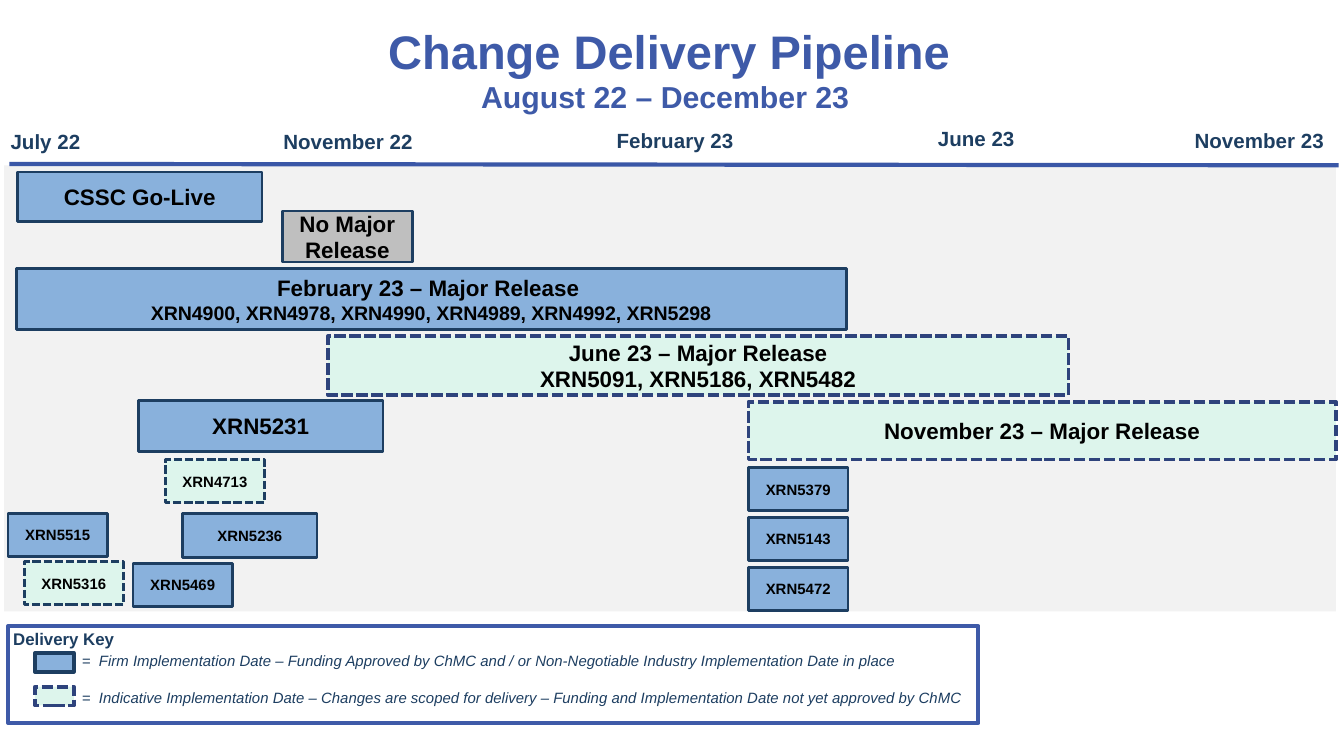
from pptx import Presentation
from pptx.dml.color import RGBColor
from pptx.enum.dml import MSO_LINE as Dash
from pptx.enum.shapes import MSO_CONNECTOR as Connector, MSO_SHAPE as Shape
from pptx.enum.text import MSO_ANCHOR as Anchor, PP_ALIGN as Align
from pptx.util import Emu, Pt
from lxml.etree import SubElement
from pptx.oxml.ns import qn

SCALE = 9144  # EMU per px, 100 px to the inch
NAVY, BLUE, AXIS, BLACK = "1D3E61", "3E5AA8", "3A57A7", "000000"

# Box styles: fill, line colour, line width, dashed
STYLES = {
    "firm": ("89B1DC", NAVY, 1.5, False),
    "firm key": ("89B1DC", NAVY, 2, False),
    "indicative": ("DDF5EC", "2E437C", 2, True),
    "small indicative": ("DDF5EC", NAVY, 1.5, True),
    "none": ("BFBFBF", NAVY, 1.5, False),
    "panel": ("F2F2F2", None, 0, False),
    "key frame": (None, BLUE, 2.25, False),
}

TITLE = [("Change Delivery Pipeline", 25.2), ("August 22 – December 23 ", 16.2)]

# Text, left, top, width
MONTHS = [
    ("July 22", -2, 91, 72),
    ("November 22", 201, 91, 117),
    ("February 23", 449, 90, 108),
    ("June 23", 688, 89, 78),
    ("November 23", 879, 90, 117),
]

# Style, (left, top, width, height), lines of (text, size)
RELEASES = [
    ("firm", (13, 128, 182, 37), [("CSSC Go-Live", 12)]),
    ("none", (210, 157, 97, 38), [("No Major Release", 12)]),
    ("firm", (12, 200, 618, 45), [
        ("February 23 – Major Release ", 12),
        ("XRN4900, XRN4978, XRN4990, XRN4989, XRN4992, XRN5298", 10.5)]),
    ("indicative", (244, 250, 551, 44), [
        ("June 23 – Major Release", 12), ("XRN5091, XRN5186, XRN5482", 12)]),
    ("firm", (103, 298, 182, 38), [("XRN5231", 12)]),
    ("indicative", (557, 299, 437, 43), [("November 23 – Major Release", 12)]),
    ("firm", (136, 382, 100, 33), [("XRN5236", 8)]),
]

# Small changes of one size: text, style, left, top
CHANGES = [
    ("XRN4713", "small indicative", 123, 342),
    ("XRN5515", "firm", 6, 382),
    ("XRN5316", "small indicative", 18, 418),
    ("XRN5469", "firm", 99, 419),
] + [(name, "firm", 557, 348 + 37 * row)
     for row, name in enumerate(["XRN5379", "XRN5143", "XRN5472"])]

# Style, swatch top, meaning
KEY = [
    ("firm key", 486, "=  Firm Implementation Date – Funding Approved by ChMC "
     "and / or Non-Negotiable Industry Implementation Date in place"),
    ("indicative", 511, "=  Indicative Implementation Date – Changes are scoped for "
     "delivery – Funding and Implementation Date not yet approved by ChMC"),
]


def px(value):
    return Emu(value * SCALE)


def color(value):
    return RGBColor.from_string(value)


def write(box, lines, ink, align=Align.LEFT, gap=0, one_para=False,
          frame_format=None, **font_format):
    frame = box.text_frame
    for name, value in {"word_wrap": True, **(frame_format or {})}.items():
        setattr(frame, name, value)
    para = frame.paragraphs[0]
    for index, (text, size) in enumerate(lines):
        if index and one_para:
            para.add_line_break()
        elif index:
            para = frame.add_paragraph()
            if gap:
                para.space_before = Pt(gap)
        para.alignment = align
        span = para.add_run()
        span.text = text
        span.font.color.rgb = color(ink)
        for name, value in {"name": "Arial", "size": Pt(size), **font_format}.items():
            setattr(span.font, name, value)


def add_text(page, place, lines, ink, **options):
    write(page.shapes.add_textbox(*map(px, place)), lines, ink, **options)


def add_box(page, style, place, lines=()):
    fill, edge, width, dashed = STYLES[style]
    box = page.shapes.add_shape(Shape.RECTANGLE, *map(px, place))
    box.shadow.inherit = False
    if fill:
        box.fill.solid()
        box.fill.fore_color.rgb = color(fill)
    else:
        box.fill.background()
    if edge:
        box.line.color.rgb = color(edge)
        box.line.width = Pt(width)
        if dashed:
            box.line.dash_style = Dash.SQUARE_DOT
    else:
        box.line.fill.background()
    if lines:
        write(box, lines, BLACK, align=Align.CENTER, bold=True,
              frame_format={"vertical_anchor": Anchor.MIDDLE})


# Widescreen page, 16 to 9
deck = Presentation()
deck.slide_width = px(1000)
deck.slide_height = Emu(deck.slide_width * 9 // 16)
page = deck.slides.add_slide(deck.slide_layouts[6])

# Title
add_text(page, (-2, 16, 1000, 70), TITLE, BLUE, align=Align.CENTER, one_para=True,
         bold=True, frame_format={"vertical_anchor": Anchor.MIDDLE})

# Timeline
add_box(page, "panel", (3, 123, 991, 332))
axis = page.shapes.add_connector(Connector.STRAIGHT, *map(px, (7, 122, 996, 123)))
axis.line.color.rgb = color(AXIS)
axis.line.width = Pt(2.25)
SubElement(axis.element.spPr, qn("a:effectLst"))
for month, left, top, width in MONTHS:
    add_text(page, (left, top, width, 29), [(month, 11)], NAVY, bold=True,
             frame_format={"word_wrap": False})

# Releases and single changes
for style, place, lines in RELEASES:
    add_box(page, style, place, lines)
for name, style, left, top in CHANGES:
    add_box(page, style, (left, top, 74, 32), [(name, 8)])

# Delivery key
add_box(page, "key frame", (6, 466, 722, 72))
add_text(page, (11, 467, 733, 64), [(meaning, 8) for _, _, meaning in KEY], NAVY,
         gap=10, italic=True,
         frame_format={"margin_left": px(50), "margin_top": px(18)})
for style, top, _ in KEY:
    add_box(page, style, (26, top, 29, 14))
add_text(page, (0, 463, 213, 25), [("Delivery Key", 9)], NAVY, bold=True)

deck.save("out.pptx")
